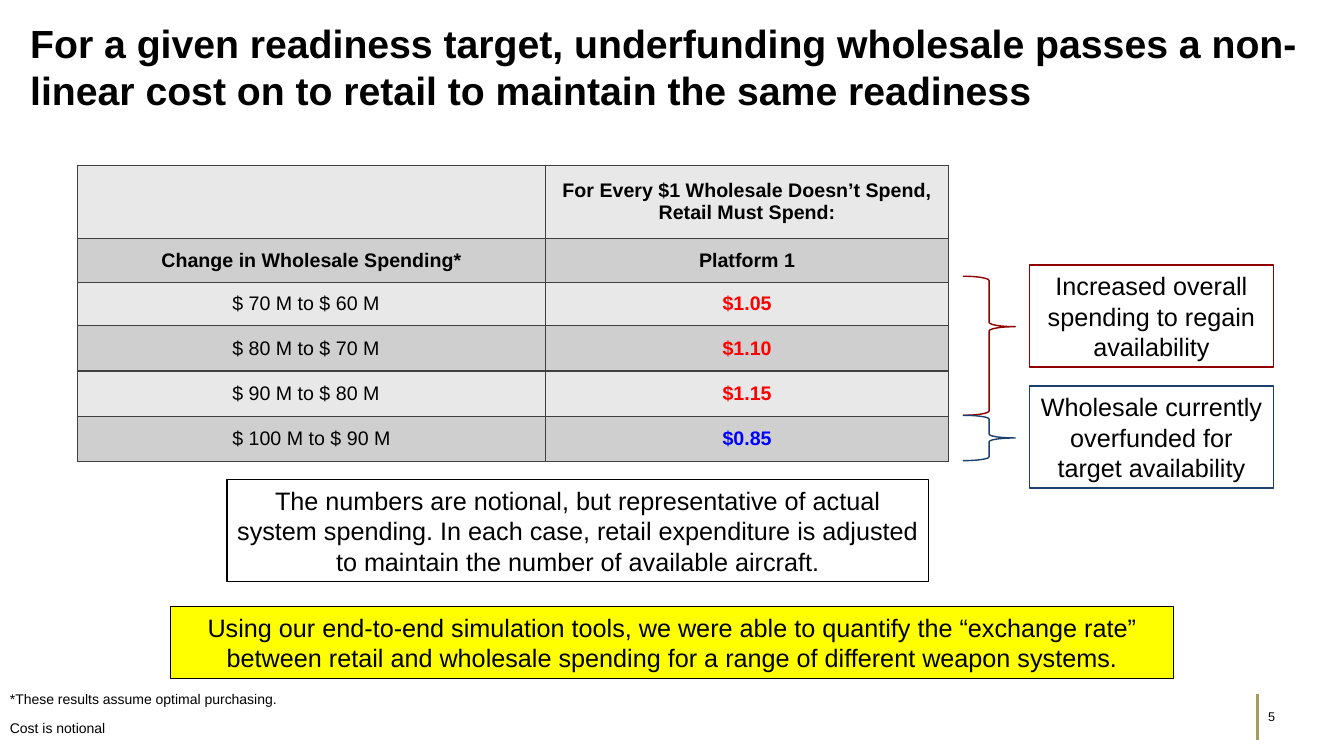
"""Build the slide on what underfunding wholesale costs retail."""
from lxml.etree import SubElement
from pptx import Presentation
from pptx.dml.color import RGBColor
from pptx.enum.shapes import MSO_CONNECTOR, MSO_SHAPE
from pptx.enum.text import MSO_ANCHOR, PP_ALIGN
from pptx.oxml.ns import qn
from pptx.util import Pt

PX = 9144
COLORS = {
    "black": "000000", "white": "FFFFFF", "yellow": "FFFF00",
    "red": "FF0000", "blue": "0000FF", "maroon": "900001", "navy": "1C3F6E",
    "light": "E8E8E8", "mid": "CFCFCF", "border": "404040", "gold": "A59A60",
}
TITLE = ("For a given readiness target, underfunding wholesale passes a non-linear "
         "cost on to retail to maintain the same readiness")
TITLE_AREA = (20, 14, 1291, 89)
HEADINGS = [
    ("", "For Every $1 Wholesale Doesn’t Spend, Retail Must Spend:"),
    ("Change in Wholesale Spending*", "Platform 1"),
]
SPENDING = [
    ("$ 70 M to $ 60 M", "$1.05", "red", 21),
    ("$ 80 M to $ 70 M", "$1.10", "red", 21),
    ("$ 90 M to $ 80 M", "$1.15", "red", 21),
    ("$ 100 M to $ 90 M", "$0.85", "blue", 10),
]
TABLE_CORNER = (77, 164)
COLUMN_WIDTHS = [464, 400]
ROW_HEIGHTS = [73, 43, 43, 45, 45, 45]
BOXES = [
    ("Using our end-to-end simulation tools, we were able to quantify the “exchange rate” "
     "between retail and wholesale spending for a range of different weapon systems.",
     (169, 602, 995, 71), "yellow", "black", 0.75),
    ("Increased overall spending to regain availability",
     (1021, 263, 242, 101), "white", "maroon", 1),
    ("Wholesale currently overfunded for target availability",
     (1021, 383, 242, 101), "white", "navy", 1),
    ("The numbers are notional, but representative of actual system spending. In each case, "
     "retail expenditure is adjusted to maintain the number of available aircraft.",
     (225, 476, 696, 101), "white", "black", 1),
]
BRACES = [
    ((955, 274, 52, 138), "maroon", (0.083, 0.363)),
    ((955, 412, 52, 45), "navy", (0.083, 0.5)),
]
FOOTNOTES = ["*These results assume optimal purchasing.", "Cost is notional"]
FOOTNOTE_AREA = (0, 682, 1164, 54)
PAGE_NUMBER = "5"
PAGE_AREA = (1248, 698, 52, 27)
PAGE_RULE = (1247, 689, 1247, 734)


def emu(lengths):
    return [length * PX for length in lengths]


def rgb(color):
    return RGBColor.from_string(COLORS[color])


def assign(target, values):
    for name, value in values.items():
        setattr(target, name, value)


def write(frame, lines, size, color="black", bold=False, **layout):
    frame.word_wrap = True
    for index, line in enumerate(lines):
        paragraph = frame.paragraphs[0] if index == 0 else frame.add_paragraph()
        run = paragraph.add_run()
        run.text = line
        assign(paragraph, layout)
        assign(run.font, {"name": "Arial", "size": Pt(size), "bold": bold})
        run.font.color.rgb = rgb(color)


def outline(shape, color, width):
    shape.line.color.rgb = rgb(color)
    shape.line.width = Pt(width)


def add_title(slide):
    title = slide.shapes.title
    assign(title, dict(zip(("left", "top", "width", "height"), emu(TITLE_AREA))))
    title.text_frame.vertical_anchor = MSO_ANCHOR.TOP
    write(title.text_frame, [TITLE], 28, bold=True,
          alignment=PP_ALIGN.LEFT, line_spacing=Pt(33.6))


def format_cell(cell, text, fill, color, bold, margin):
    properties = cell._tc.get_or_add_tcPr()
    for side in ("lnL", "lnR", "lnT", "lnB"):
        edge = SubElement(properties, qn(f"a:{side}"), w=str(Pt(1)))
        paint = SubElement(edge, qn("a:solidFill"))
        SubElement(paint, qn("a:srgbClr"), val=COLORS["border"])
    cell.fill.solid()
    cell.fill.fore_color.rgb = rgb(fill)
    assign(cell, {"vertical_anchor": MSO_ANCHOR.MIDDLE, "margin_right": margin * PX})
    if text:
        write(cell.text_frame, [text], 14, color, bold, alignment=PP_ALIGN.CENTER)


def add_spending_table(slide):
    rows = [[(text, "black", True, 10) for text in heading] for heading in HEADINGS]
    rows += [[(change, "black", False, margin), (cost, color, True, 10)]
             for change, cost, color, margin in SPENDING]
    size = (sum(COLUMN_WIDTHS), sum(ROW_HEIGHTS))
    table = slide.shapes.add_table(
        len(rows), len(COLUMN_WIDTHS), *emu(TABLE_CORNER + size)).table
    for column, width in zip(table.columns, COLUMN_WIDTHS):
        column.width = width * PX
    for row, height, cells, index in zip(table.rows, ROW_HEIGHTS, rows, range(len(rows))):
        row.height = height * PX
        fill = ("light", "mid")[index % 2]
        for cell, (text, color, bold, margin) in zip(row.cells, cells):
            format_cell(cell, text, fill, color, bold, margin)


def add_boxes(slide):
    for text, area, fill, color, width in BOXES:
        box = slide.shapes.add_shape(MSO_SHAPE.RECTANGLE, *emu(area))
        box.shadow.inherit = False
        box.fill.solid()
        box.fill.fore_color.rgb = rgb(fill)
        outline(box, color, width)
        box.text_frame.vertical_anchor = MSO_ANCHOR.MIDDLE
        write(box.text_frame, [text], 18,
              alignment=PP_ALIGN.CENTER, line_spacing=Pt(21.6))


def add_braces(slide):
    for area, color, bends in BRACES:
        brace = slide.shapes.add_shape(MSO_SHAPE.RIGHT_BRACE, *emu(area))
        brace.shadow.inherit = False
        brace.fill.background()
        outline(brace, color, 1)
        for index, bend in enumerate(bends):
            brace.adjustments[index] = bend


def add_footer(slide):
    footnotes = slide.shapes.add_textbox(*emu(FOOTNOTE_AREA)).text_frame
    write(footnotes, FOOTNOTES, 10, line_spacing=0.9)
    footnotes.paragraphs[1].space_before = Pt(10)
    write(slide.shapes.add_textbox(*emu(PAGE_AREA)).text_frame, [PAGE_NUMBER], 9)
    rule = slide.shapes.add_connector(MSO_CONNECTOR.STRAIGHT, *emu(PAGE_RULE))
    outline(rule, "gold", 2)
    SubElement(rule._element.spPr, qn("a:effectLst"))


def main():
    deck = Presentation()
    deck.slide_width, deck.slide_height = emu((1333, 750))
    slide = deck.slides.add_slide(deck.slide_layouts[5])
    add_title(slide)
    add_spending_table(slide)
    add_boxes(slide)
    add_braces(slide)
    add_footer(slide)
    deck.save("out.pptx")


if __name__ == "__main__":
    main()
